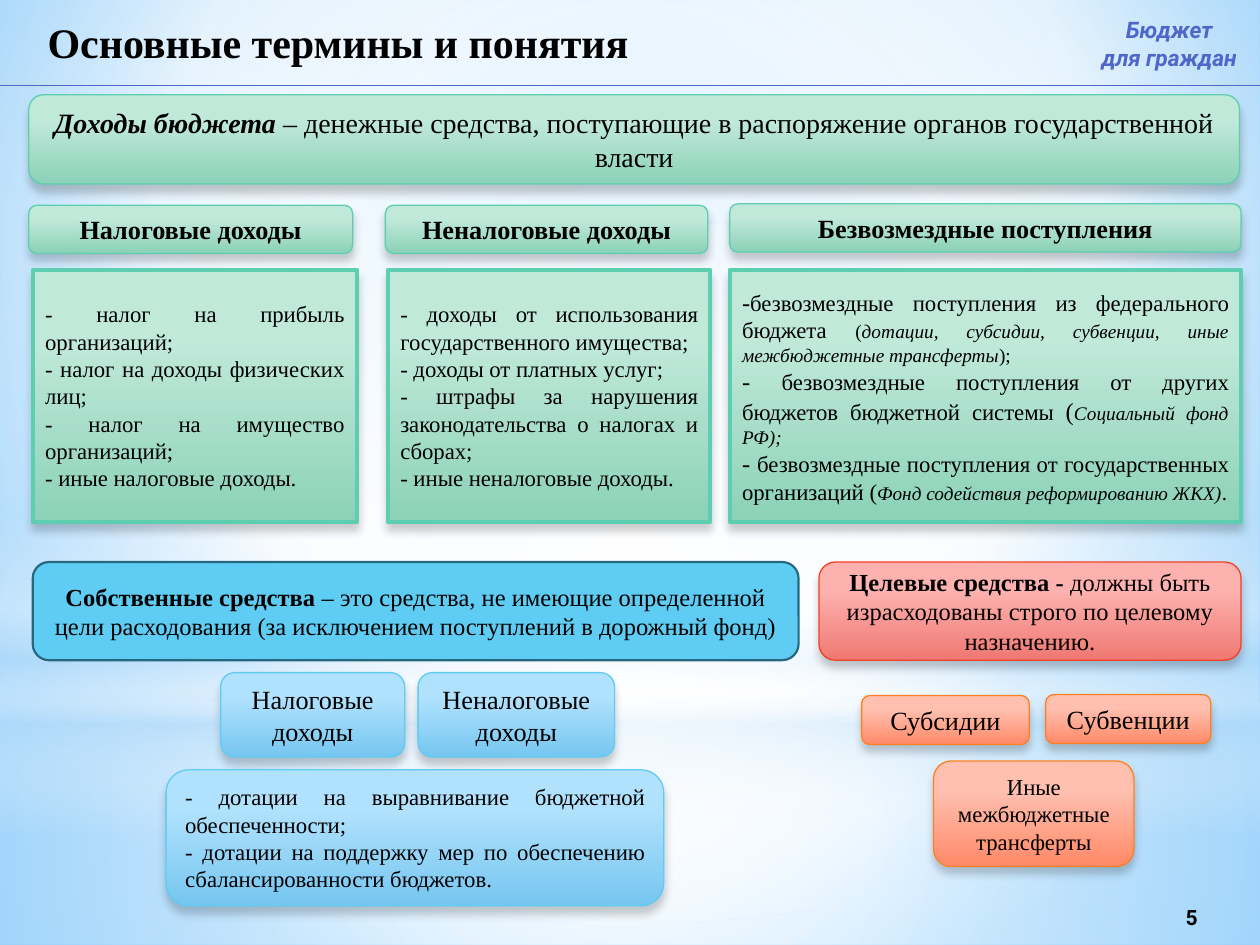
import pptx
import pptx.util
import pptx.dml.color
import pptx.enum.shapes
import pptx.enum.text
import pptx.oxml
import pptx.oxml.ns

Cm, Pt = pptx.util.Cm, pptx.util.Pt
SHAPE = pptx.enum.shapes.MSO_SHAPE
ALIGN = pptx.enum.text.PP_ALIGN
ANCHOR = pptx.enum.text.MSO_ANCHOR
NS = pptx.oxml.ns.nsdecls("a")
W, H = 25.4, 19.05

GREEN = {"stops": [(28, "C0E9DA"), (100, "8CD1B8")], "edge": "5DCEAF"}
BLUE = {"stops": [(28, "B1E2FD"), (100, "76C6F1")], "edge": "5ECCF3"}
RED = {"stops": [(28, "FDB2AF"), (100, "F07873")], "edge": "F14124"}
ORANGE = {"stops": [(28, "FFC0AF"), (100, "FF8968")], "edge": "FF8021"}

CENTER = (50, 50, 50, 50)
BACKDROP_STOPS = [(0, "9ED5FF"), (60, "FFFFFF"), (100, "5BB9FF")]
BACKDROP_FOCUS = (20, 10, 20, 60)
HAZE = [
    (SHAPE.RECTANGLE, 14.17, 4.88, CENTER,
     [(0, "FFFFFF", 91), (37, "FFFFFF", 76), (100, "B4DCFA", 79)]),
    (SHAPE.RECTANGLE, 0, 14.17, CENTER,
     [(0, "FFFFFF", 89), (48, "FFFFFF", 62), (100, "B4DCFA", 79)]),
    (SHAPE.RECTANGLE, 10.46, 6.35, None,
     [(0, "FFFFFF", 0), (29, "FFFFFF", 30), (45, "B4DCFA", 40),
      (55, "FFFFFF", 26), (65, "B4DCFA", 60), (100, "FFFFFF", 0)]),
    (SHAPE.OVAL, 4.45, 14.17, CENTER, [(0, "FFFFFF", 100), (56, "FFFFFF", 0)]),
]

B, I = {"bold": True}, {"italic": True}
SMALL, LARGE = {"size": 11}, {"size": 14}
SMALL_ITALIC = {"size": 11, "italic": True}

DEFINITION = [[("Доходы бюджета", {**B, **I}),
               " – денежные средства, поступающие в распоряжение органов государственной власти"]]
COLUMNS = [
    ("Налоговые доходы", 0.58, 4.14, 0.66, 6.53, [
        "- налог на прибыль организаций;",
        "- налог на доходы физических лиц;",
        "- налог на имущество организаций;",
        "- иные налоговые доходы."]),
    ("Неналоговые доходы", 7.77, 4.14, 7.82, 6.5, [
        "- доходы от использования государственного имущества;",
        "- доходы от платных услуг;",
        "- штрафы за нарушения законодательства о налогах и сборах;",
        "- иные неналоговые доходы."]),
    ("Безвозмездные поступления", 14.71, 4.11, 14.71, 10.31, [
        [("-", LARGE), "безвозмездные поступления из федерального бюджета ", ("(", SMALL),
         ("дотации, субсидии, субвенции, иные межбюджетные трансферты", SMALL_ITALIC), (");", SMALL)],
        [("- ", LARGE), "безвозмездные поступления от других бюджетов бюджетной системы ",
         ("(", LARGE), ("Социальный фонд РФ);", SMALL_ITALIC)],
        [("- ", LARGE), "безвозмездные поступления от государственных организаций (",
         ("Фонд содействия реформированию ЖКХ)", SMALL_ITALIC), (".", {"size": 12})]]),
]
OWN_FUNDS = [[("Собственные средства ", B),
              "– это средства, не имеющие определенной цели расходования "
              "(за исключением поступлений в дорожный фонд)"]]
TARGET_FUNDS = [[("Целевые средства - ", B),
                 "должны быть израсходованы строго по целевому назначению."]]
GRANTS = ["- дотации на выравнивание бюджетной обеспеченности;",
          "- дотации на поддержку мер по обеспечению сбалансированности бюджетов."]
FUND_PARTS = [
    (["Налоговые доходы"], (4.45, 13.56, 3.71, 1.7), BLUE, 15, ALIGN.CENTER),
    (["Неналоговые доходы"], (8.43, 13.56, 3.96, 1.7), BLUE, 15, ALIGN.CENTER),
    (GRANTS, (3.35, 15.52, 10.03, 2.74), BLUE, 13, ALIGN.JUSTIFY),
    (["Субвенции"], (21.08, 14, 3.33, 0.99), ORANGE, 15, ALIGN.CENTER),
    (["Субсидии"], (17.37, 14.02, 3.38, 0.99), ORANGE, 15, ALIGN.CENTER),
    (["Иные межбюджетные трансферты"], (18.82, 15.34, 4.04, 2.13), ORANGE, 13, ALIGN.CENTER),
]


def color(value):
    return pptx.dml.color.RGBColor.from_string(value)


def set_gradient(fill, parent, stops, focus=None):
    fill.gradient()
    stop_xml = "".join(
        f'<a:gs pos="{pos * 1000}"><a:srgbClr val="{value}">'
        f'<a:alpha val="{(alpha or [100])[0] * 1000}"/></a:srgbClr></a:gs>'
        for pos, value, *alpha in stops)
    if focus:
        left, top, right, bottom = (part * 1000 for part in focus)
        direction = (f'<a:path path="circle"><a:fillToRect l="{left}" t="{top}" '
                     f'r="{right}" b="{bottom}"/></a:path>')
    else:
        direction = '<a:lin ang="5400000" scaled="0"/>'
    gradient = pptx.oxml.parse_xml(
        f'<a:gradFill {NS} rotWithShape="1"><a:gsLst>{stop_xml}</a:gsLst>{direction}</a:gradFill>')
    parent.replace(parent.find(pptx.oxml.ns.qn("a:gradFill")), gradient)


def write(holder, paragraphs, size=13, font="Times New Roman", ink="000000", bold=False,
          italic=False, align=ALIGN.CENTER, anchor=ANCHOR.MIDDLE, wrap=True):
    frame = holder.text_frame
    frame.word_wrap = wrap
    frame.vertical_anchor = anchor
    for index, content in enumerate(paragraphs):
        paragraph = frame.paragraphs[0] if index == 0 else frame.add_paragraph()
        paragraph.alignment = align
        for part in [content] if isinstance(content, str) else content:
            text, changes = (part, {}) if isinstance(part, str) else part
            run = paragraph.add_run()
            run.text = text
            run.font.name = font
            run.font.size = Pt(changes.get("size", size))
            run.font.bold = changes.get("bold", bold)
            run.font.italic = changes.get("italic", italic)
            run.font.color.rgb = color(ink)


def add_panel(slide, kind, place):
    panel = slide.shapes.add_shape(kind, *map(Cm, place))
    panel.shadow.inherit = False
    return panel


def add_card(slide, paragraphs, place, theme, kind=SHAPE.ROUNDED_RECTANGLE, edge_width=0.75, **style):
    card = add_panel(slide, kind, place)
    properties = card.element.spPr
    set_gradient(card.fill, properties, theme["stops"])
    card.line.color.rgb = color(theme["edge"])
    card.line.width = Pt(edge_width)
    properties.find(pptx.oxml.ns.qn("a:effectLst")).append(pptx.oxml.parse_xml(
        f'<a:outerShdw {NS} blurRad="63500" dist="50800" dir="5400000" rotWithShape="0">'
        '<a:srgbClr val="000000"><a:alpha val="20000"/></a:srgbClr></a:outerShdw>'))
    write(card, paragraphs, **style)


def add_label(slide, paragraphs, place, **style):
    write(slide.shapes.add_textbox(*map(Cm, place)), paragraphs, **style)


def main():
    deck = pptx.Presentation()
    deck.slide_width, deck.slide_height = Cm(W), Cm(H)
    slide = deck.slides.add_slide(deck.slide_layouts[6])

    backdrop = slide.background.fill
    backdrop.solid()
    set_gradient(backdrop, slide.element.xpath(".//p:bgPr")[0], BACKDROP_STOPS, BACKDROP_FOCUS)
    for kind, top, height, focus, stops in HAZE:
        haze = add_panel(slide, kind, (0, top, W, height))
        set_gradient(haze.fill, haze.element.spPr, stops, focus)
        haze.line.fill.background()

    own_funds = add_panel(slide, SHAPE.ROUNDED_RECTANGLE, (0.66, 11.33, 15.44, 1.98))
    own_funds.fill.solid()
    own_funds.fill.fore_color.rgb = color("5ECCF3")
    own_funds.line.color.rgb = color("256880")
    own_funds.line.width = Pt(1.25)
    write(own_funds, OWN_FUNDS, size=14)
    add_card(slide, TARGET_FUNDS, (16.51, 11.33, 8.51, 1.98), RED, size=14)
    for paragraphs, place, theme, size, align in FUND_PARTS:
        add_card(slide, paragraphs, place, theme, size=size, align=align)

    add_label(slide, ["5"], (22.63, 17.98, 2.79, 1.02), size=12, font="Roboto", bold=True)
    add_label(slide, ["Основные термины и понятия"], (0.71, 0.2, 12.7, 1.5), size=24, bold=True,
              align=ALIGN.LEFT, anchor=ANCHOR.TOP)
    rule = slide.shapes.add_connector(
        pptx.enum.shapes.MSO_CONNECTOR.STRAIGHT, Cm(0), Cm(1.73), Cm(W), Cm(1.73))
    rule.line.color.rgb = color("4E67C8")
    rule.line.width = Pt(0.75)
    rule.element.spPr.append(pptx.oxml.parse_xml(f"<a:effectLst {NS}/>"))
    add_label(slide, ["Бюджет", "для граждан"], (21.87, 0.2, 3.4, 1.37), font="Roboto",
              ink="4E67C8", bold=True, italic=True, anchor=ANCHOR.TOP, wrap=False)

    add_card(slide, DEFINITION, (0.58, 1.91, 24.41, 1.8), GREEN, size=16)
    for heading, heading_left, heading_top, body_left, width, items in COLUMNS:
        add_card(slide, [heading], (heading_left, heading_top, width, 0.97), GREEN,
                 size=15, bold=True)
        add_card(slide, items, (body_left, 5.44, width, 5.08), GREEN, kind=SHAPE.RECTANGLE,
                 edge_width=2.25, align=ALIGN.JUSTIFY)

    deck.save("out.pptx")


if __name__ == "__main__":
    main()
